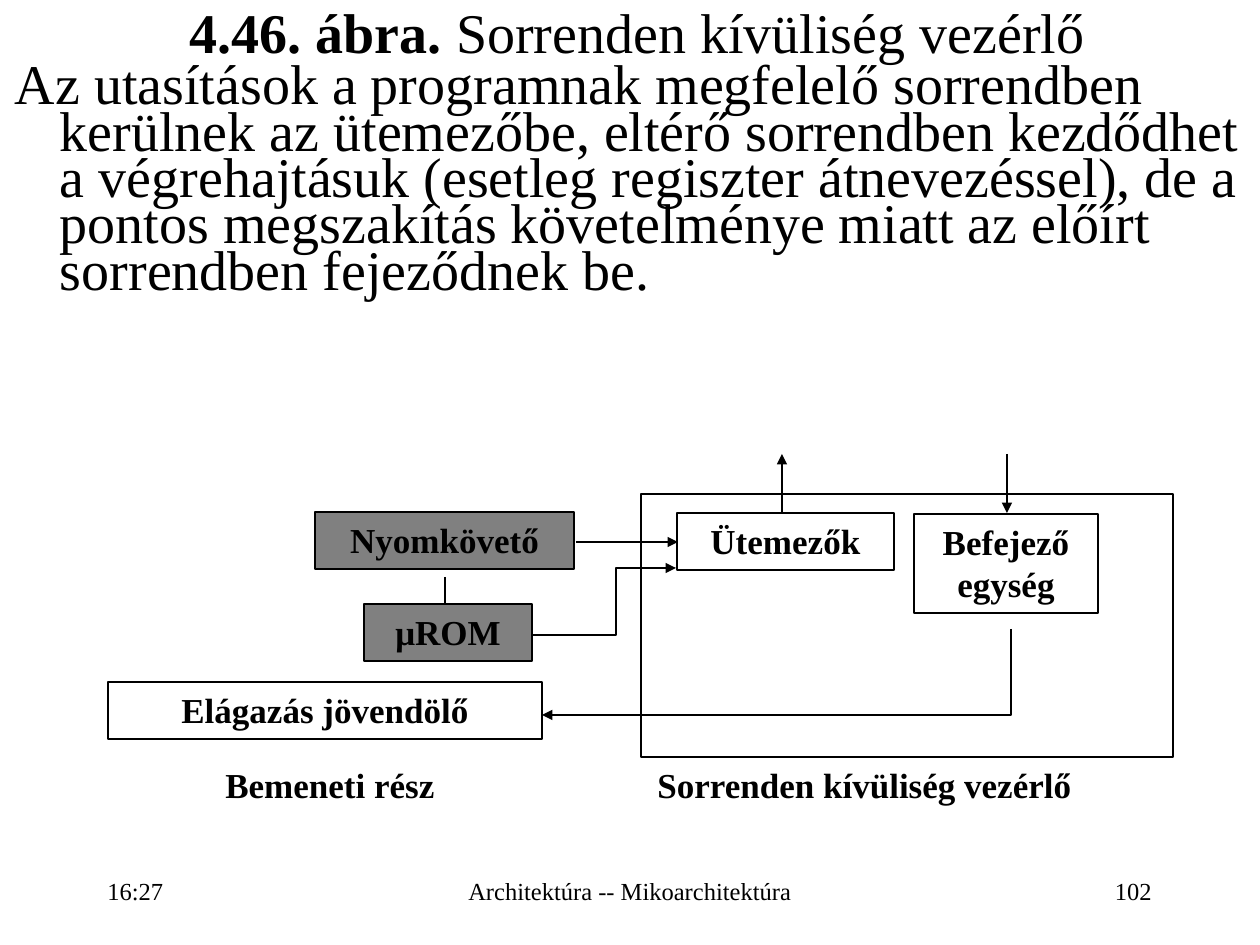
"""Builds the slide on the out-of-order control unit."""
from pptx import Presentation
from pptx import util as u
from pptx.dml.color import RGBColor
from pptx.enum import shapes, text
from pptx.oxml import ns, xmlchemy

PX = 914400 / 126
FONT = "Times New Roman"
BLACK = RGBColor(0, 0, 0)
GRAY = RGBColor(0x80, 0x80, 0x80)
LEFT, CENTER, RIGHT = text.PP_ALIGN.LEFT, text.PP_ALIGN.CENTER, text.PP_ALIGN.RIGHT
TOP, MIDDLE = text.MSO_ANCHOR.TOP, text.MSO_ANCHOR.MIDDLE

BOXES = [
    ("Nyomkövető", (315, 512, 259, 57), GRAY),
    ("μROM", (364, 604, 168, 57), GRAY),
    ("Ütemezők", (677, 513, 217, 57), None),
    ("Befejező egység", (914, 514, 184, 99), None),
    ("Elágazás jövendölő", (108, 682, 434, 57), None),
]
CAPTIONS = [
    ("Bemeneti rész", (64, 757, 532, 54), CENTER),
    ("Sorrenden kívüliség vezérlő", (645, 757, 529, 54), LEFT),
]
FOOTERS = [
    ("16:27", (95, 858, 261, 68), LEFT),
    ("Architektúra -- Mikoarchitektúra", (431, 861, 398, 62), CENTER),
    ("102", (903, 861, 261, 62), RIGHT),
]
FRAME = (641, 494, 532, 263)
ARROWS = [
    ((782, 513), (782, 454)),
    ((1007, 454), (1007, 513)),
    ((576, 542), (678, 542)),
]
ROM_LINK = ((445, 577), (445, 604))
BENT_ARROWS = [
    [(532, 635), (616, 635), (616, 568), (676, 568)],
    [(1011, 629), (1011, 715), (542, 715)],
]
BODY_AREA = (15, 16, 1245, 438)
BODY = [
    ([("4.46. ábra. ", True), ("Sorrenden kívüliség vezérlő", False)], CENTER),
    ([("Az utasítások a programnak megfelelő sorrendben kerülnek az ütemezőbe, "
       "eltérő sorrendben kezdődhet a végrehajtásuk (esetleg regiszter "
       "átnevezéssel), de a pontos megszakítás követelménye miatt az előírt "
       "sorrendben fejeződnek be.", False)], LEFT),
]


def emu(*lengths):
    """Turns pixel lengths into EMU."""
    return [round(length * PX) for length in lengths]


def add_span(para, words, size, bold=False):
    """Adds one formatted run to a paragraph."""
    span = para.add_run()
    span.text = words
    span.font.name, span.font.size = FONT, u.Pt(size)
    span.font.bold, span.font.color.rgb = bold, BLACK


def write(box, words, size=20, bold=True, align=CENTER, anchor=TOP, spacing=None):
    """Writes one wrapped paragraph into a box."""
    frame = box.text_frame
    frame.word_wrap, frame.vertical_anchor = True, anchor
    para = frame.paragraphs[0]
    para.alignment, para.line_spacing = align, spacing
    add_span(para, words, size, bold)


def add_rect(slide, area, fill=None, width=1):
    """Adds an outlined rectangle, hollow unless a fill is given."""
    box = slide.shapes.add_shape(shapes.MSO_SHAPE.RECTANGLE, *emu(*area))
    box.shadow.inherit = False
    if fill is None:
        box.fill.background()
    else:
        box.fill.solid()
        box.fill.fore_color.rgb = fill
    style_line(box, width)
    return box


def style_line(shape, width=1, arrow=False):
    """Sets a black line, with an arrowhead at its end if asked."""
    shape.line.color.rgb = BLACK
    shape.line.width = u.Pt(width)
    if arrow:
        head = xmlchemy.OxmlElement("a:tailEnd")
        head.set("type", "triangle")
        shape.element.spPr.find(ns.qn("a:ln")).append(head)


def add_line(slide, start, end, arrow=True):
    """Adds a straight connector."""
    line = slide.shapes.add_connector(
        shapes.MSO_CONNECTOR.STRAIGHT, *emu(*start, *end))
    style_line(line, arrow=arrow)
    line.element.spPr.append(xmlchemy.OxmlElement("a:effectLst"))


def add_bent_arrow(slide, points):
    """Adds an open polyline that ends in an arrowhead."""
    builder = slide.shapes.build_freeform(*points[0], scale=PX)
    builder.add_line_segments(points[1:], close=False)
    line = builder.convert_to_shape()
    line.shadow.inherit = False
    line.fill.background()
    style_line(line, arrow=True)


def fill_body(body):
    """Places the body placeholder and writes its hanging paragraphs."""
    body.left, body.top, body.width, body.height = emu(*BODY_AREA)
    frame = body.text_frame
    frame.word_wrap, frame.auto_size = True, text.MSO_AUTO_SIZE.NONE
    frame.vertical_anchor = TOP
    frame.margin_left = frame.margin_top = 0
    frame.margin_right = frame.margin_bottom = 0
    indent, = emu(45)
    for number, (spans, align) in enumerate(BODY):
        para = frame.add_paragraph() if number else frame.paragraphs[0]
        para.alignment, para.line_spacing = align, 0.69
        para.space_before = u.Pt(3)
        props = para._p.get_or_add_pPr()
        props.set("marL", str(indent))
        props.set("indent", str(-indent))
        props.append(xmlchemy.OxmlElement("a:buNone"))
        for words, bold in spans:
            add_span(para, words, 32, bold)


def main():
    """Builds and saves the deck."""
    deck = Presentation()
    deck.slide_width, deck.slide_height = emu(1260, 945)
    slide = deck.slides.add_slide(deck.slide_layouts[1])
    title = slide.shapes.title.element
    title.getparent().remove(title)
    fill_body(slide.placeholders[1])
    for words, area, fill in BOXES:
        write(add_rect(slide, area, fill), words)
    for words, area, align in CAPTIONS:
        write(slide.shapes.add_textbox(*emu(*area)), words, align=align)
    add_rect(slide, FRAME, width=1.5)
    for start, end in ARROWS:
        add_line(slide, start, end)
    add_line(slide, *ROM_LINK, arrow=False)
    for points in BENT_ARROWS:
        add_bent_arrow(slide, points)
    for words, area, align in FOOTERS:
        write(slide.shapes.add_textbox(*emu(*area)), words, size=14, bold=False,
              align=align, anchor=MIDDLE, spacing=0.93)
    deck.save("out.pptx")


if __name__ == "__main__":
    main()
